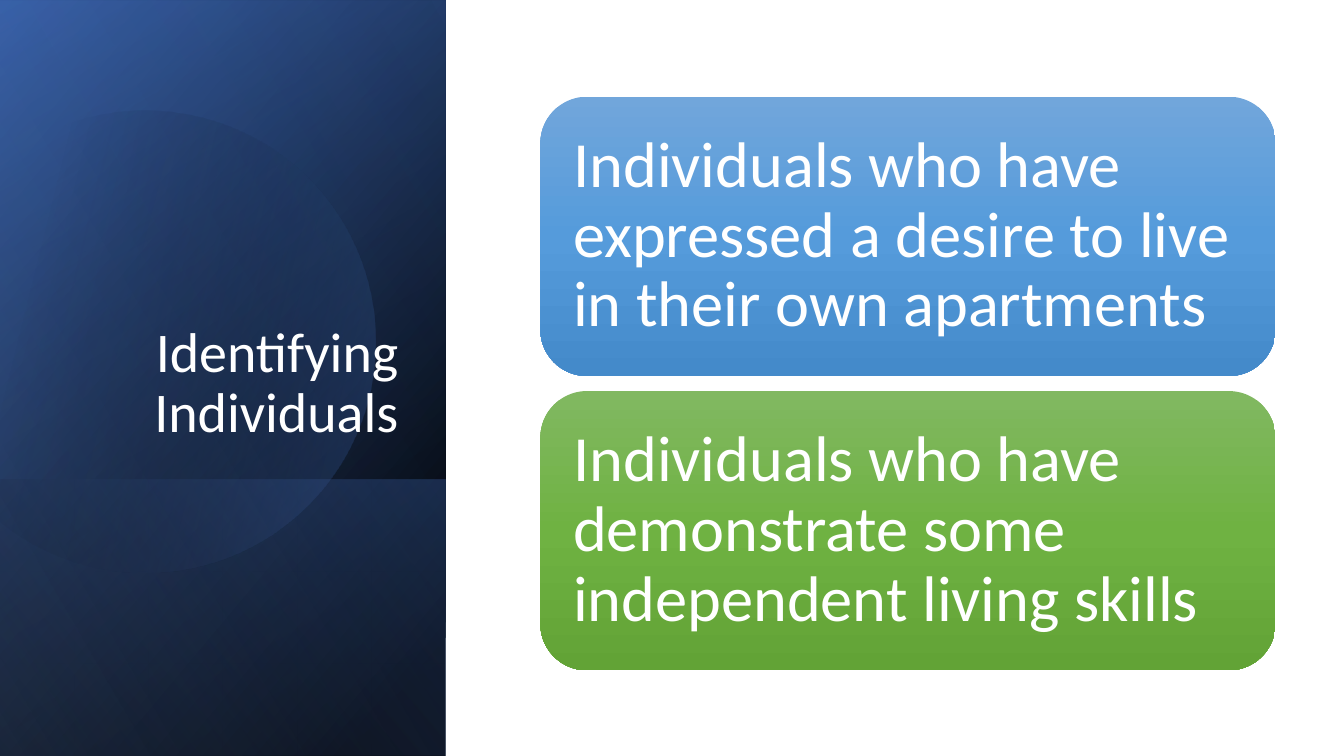
import math
from dataclasses import dataclass

import lxml.etree
import pptx
import pptx.dml.color
import pptx.enum.shapes
import pptx.enum.text
import pptx.oxml.ns
import pptx.util
from pptx.util import Inches


@dataclass(frozen=True)
class Theme:
    font: str = "Calibri"
    title_size: int = 40
    card_size: int = 46
    line_spacing: float = 0.9
    text: str = "FFFFFF"
    black: str = "000000"
    blue: str = "4472C4"
    dark_blue: str = "2F5597"
    pale_blue: str = "8FAADC"
    blue_card: tuple[str, ...] = ("71A6DB", "559BDB", "448ACA")
    green_card: tuple[str, ...] = ("81B861", "6FB242", "62A336")


@dataclass(frozen=True)
class Stop:
    position: int
    color: str
    opacity: int = 100


@dataclass(frozen=True)
class Gradient:
    angle: int
    stops: tuple[Stop, ...]


@dataclass(frozen=True)
class Panel:
    left: float
    top: float
    width: float
    gradient: Gradient


@dataclass(frozen=True)
class Card:
    text: str
    colors: tuple[str, ...]


THEME = Theme()
PANEL_HEIGHT = 4.42
CARD_LEFT, CARD_TOP, CARD_WIDTH, CARD_HEIGHT = 5.36, 0.96, 7.29, 2.77
CARD_PITCH = 2.92
CARD_INSET = 0.19
DISC_X, DISC_Y, DISC_RADIUS = 1.44, 3.39, 2.29
DISC_ARC, DISC_TILT, DISC_STEPS = 134, -16.1, 90

PANELS_BELOW_DISC = (
    Panel(-1.54, 1.54, 7.5, Gradient(50, (Stop(8, THEME.black), Stop(100, THEME.dark_blue)))),
    Panel(-1.54, 1.55, 7.5, Gradient(30, (Stop(0, THEME.black, 0), Stop(99, THEME.blue, 46)))),
    Panel(0.84, 3.92, 2.74, Gradient(130, (Stop(2, THEME.blue, 29), Stop(100, THEME.black, 30)))),
)
DISC_GRADIENT = Gradient(30, (Stop(29, THEME.black, 0), Stop(100, THEME.blue, 43)))
PANEL_ABOVE_DISC = Panel(
    -1.54, 1.54, 7.5, Gradient(120, (Stop(0, THEME.black, 0), Stop(99, THEME.pale_blue, 11)))
)
CARDS = (
    Card("Individuals who have expressed a desire to live in their own apartments", THEME.blue_card),
    Card("Individuals who have demonstrate some independent living skills", THEME.green_card),
)


def paint(shape, gradient: Gradient) -> None:
    """Give a shape a linear gradient, no outline and no shadow."""
    qn = pptx.oxml.ns.qn
    shape.shadow.inherit = False
    shape.line.fill.background()
    shape.fill.background()
    fill = lxml.etree.Element(qn("a:gradFill"), rotWithShape="1")
    stop_list = lxml.etree.SubElement(fill, qn("a:gsLst"))
    for stop in gradient.stops:
        entry = lxml.etree.SubElement(stop_list, qn("a:gs"), pos=str(stop.position * 1000))
        color = lxml.etree.SubElement(entry, qn("a:srgbClr"), val=stop.color)
        if stop.opacity < 100:
            lxml.etree.SubElement(color, qn("a:alpha"), val=str(stop.opacity * 1000))
    lxml.etree.SubElement(fill, qn("a:lin"), ang=str(gradient.angle * 60000), scaled="0")
    properties = shape.element.spPr
    properties.replace(properties.find(qn("a:noFill")), fill)


def write(shape, text: str, size: int, alignment, anchor) -> None:
    """Set the single paragraph of a shape."""
    frame = shape.text_frame
    frame.word_wrap = True
    frame.vertical_anchor = anchor
    paragraph = frame.paragraphs[0]
    paragraph.text = text
    paragraph.alignment = alignment
    paragraph.line_spacing = THEME.line_spacing
    paragraph.font.name = THEME.font
    paragraph.font.size = pptx.util.Pt(size)
    paragraph.font.color.rgb = pptx.dml.color.RGBColor.from_string(THEME.text)


def add_panel(slide, panel: Panel) -> None:
    shape = slide.shapes.add_shape(
        pptx.enum.shapes.MSO_SHAPE.RECTANGLE,
        Inches(panel.left), Inches(panel.top), Inches(panel.width), Inches(PANEL_HEIGHT),
    )
    shape.rotation = 90
    shape.element.spPr.find(pptx.oxml.ns.qn("a:xfrm")).set("flipH", "1")
    paint(shape, panel.gradient)


def add_disc(slide) -> None:
    """Draw a circle cut by a chord, upright on the slide once its tilt is applied."""
    tilt = math.radians(DISC_TILT)
    pivot_x, pivot_y = 1.585, 3.345
    points = []
    for step in range(DISC_STEPS + 1):
        angle = math.radians(DISC_ARC * (2 * step / DISC_STEPS - 1))
        across = DISC_X + DISC_RADIUS * math.cos(angle) - pivot_x
        down = DISC_Y + DISC_RADIUS * math.sin(angle) - pivot_y
        points.append((
            Inches(pivot_x + across * math.cos(tilt) + down * math.sin(tilt)),
            Inches(pivot_y - across * math.sin(tilt) + down * math.cos(tilt)),
        ))
    builder = slide.shapes.build_freeform(*points[0])
    builder.add_line_segments(points[1:], close=True)
    disc = builder.convert_to_shape()
    disc.rotation = DISC_TILT
    paint(disc, DISC_GRADIENT)


def add_title(slide) -> None:
    title = slide.shapes.add_textbox(Inches(0.64), Inches(1.84), Inches(3.41), Inches(2.62))
    write(title, "Identifying Individuals", THEME.title_size,
          pptx.enum.text.PP_ALIGN.RIGHT, pptx.enum.text.MSO_ANCHOR.BOTTOM)


def add_card(slide, card: Card, top: float) -> None:
    shape = slide.shapes.add_shape(
        pptx.enum.shapes.MSO_SHAPE.ROUNDED_RECTANGLE,
        Inches(CARD_LEFT), Inches(top), Inches(CARD_WIDTH), Inches(CARD_HEIGHT),
    )
    paint(shape, Gradient(90, tuple(Stop(50 * i, color) for i, color in enumerate(card.colors))))
    frame = shape.text_frame
    frame.margin_left = frame.margin_right = Inches(CARD_INSET)
    frame.margin_top = frame.margin_bottom = Inches(CARD_INSET)
    write(shape, card.text, THEME.card_size,
          pptx.enum.text.PP_ALIGN.LEFT, pptx.enum.text.MSO_ANCHOR.MIDDLE)


def main() -> None:
    presentation = pptx.Presentation()
    presentation.slide_width = Inches(13.33)
    presentation.slide_height = Inches(7.5)
    slide = presentation.slides.add_slide(presentation.slide_layouts[6])

    # Layered side band
    for panel in PANELS_BELOW_DISC:
        add_panel(slide, panel)
    add_disc(slide)
    add_panel(slide, PANEL_ABOVE_DISC)
    add_title(slide)

    # Stacked cards
    for index, card in enumerate(CARDS):
        add_card(slide, card, CARD_TOP + index * CARD_PITCH)

    presentation.save("out.pptx")


if __name__ == "__main__":
    main()
